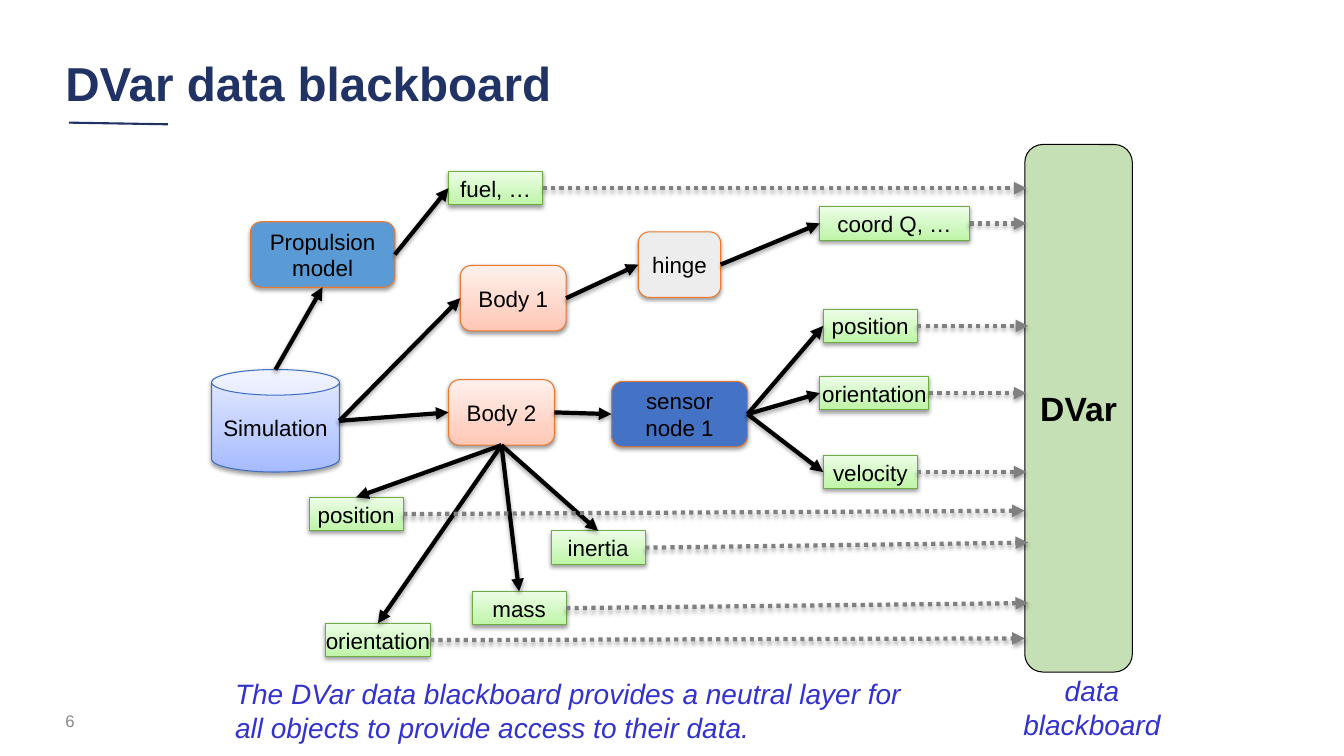
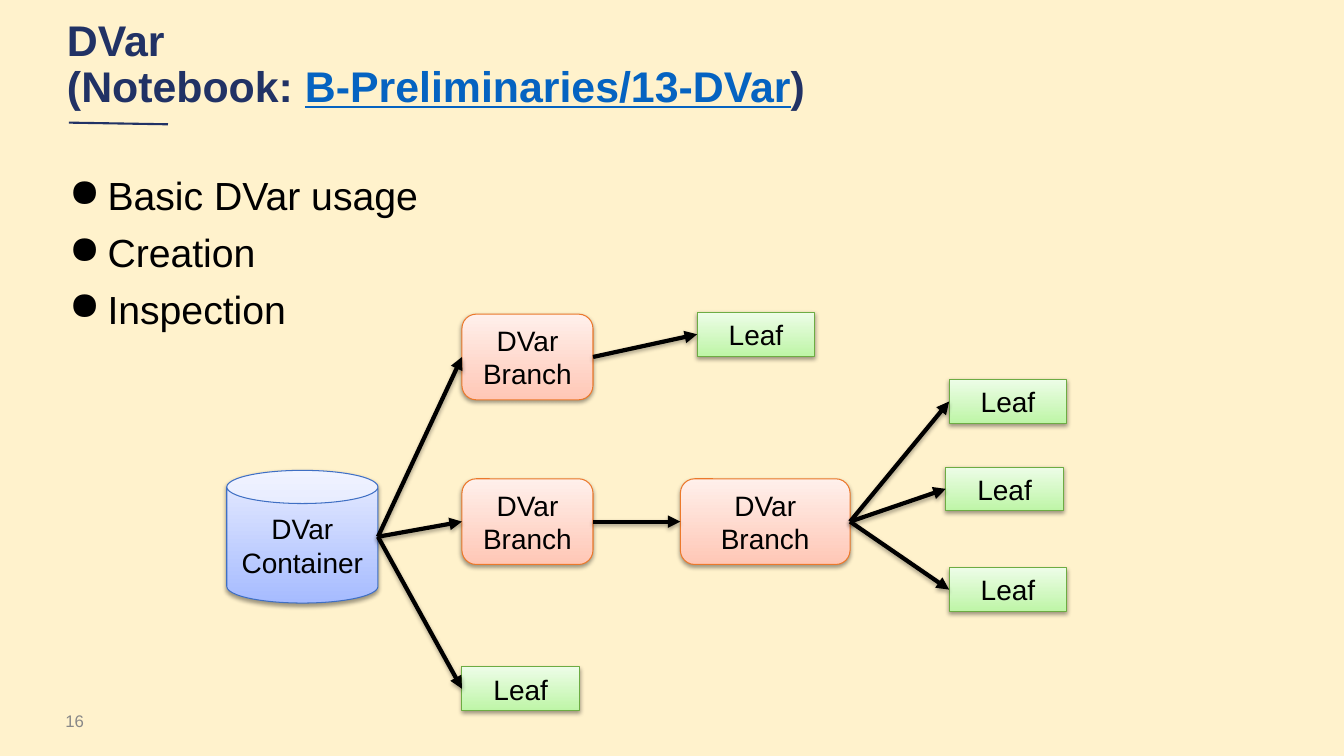
"""Build two slides that show how DVar gathers simulation data."""
from lxml import etree
from pptx import Presentation
from pptx.dml.color import RGBColor
from pptx.enum.dml import MSO_LINE
from pptx.enum.shapes import MSO_CONNECTOR, MSO_SHAPE
from pptx.enum.text import MSO_ANCHOR, PP_ALIGN
from pptx.oxml.ns import qn
from pptx.util import Inches, Pt

STRAIGHT = MSO_CONNECTOR.STRAIGHT
DOTTED = MSO_LINE.ROUND_DOT
CAN, RECTANGLE, ROUNDED = MSO_SHAPE.CAN, MSO_SHAPE.RECTANGLE, MSO_SHAPE.ROUNDED_RECTANGLE
TOP, MIDDLE = MSO_ANCHOR.TOP, MSO_ANCHOR.MIDDLE
LEFT_ALIGN, CENTER = PP_ALIGN.LEFT, PP_ALIGN.CENTER

WHITE = RGBColor(0xFF, 0xFF, 0xFF)
BLACK = RGBColor(0, 0, 0)
CREAM = RGBColor(0xFF, 0xF2, 0xCC)
NAVY = RGBColor(0x21, 0x32, 0x65)
NUMBER_GRAY = RGBColor(0x88, 0x88, 0x88)
FLOW_GRAY = RGBColor(0x80, 0x80, 0x80)
LINK_BLUE = RGBColor(0x05, 0x63, 0xC1)
CAPTION_BLUE = RGBColor(0x33, 0x33, 0xCC)
ORANGE = RGBColor(0xEC, 0x79, 0x2B)
PEACH, PALE_PEACH = RGBColor(0xFF, 0xC7, 0xB6), RGBColor(0xFF, 0xF0, 0xEB)
BLUE, PERIWINKLE, PALE_BLUE = RGBColor(0x3F, 0x6F, 0xC3), RGBColor(0xA6, 0xBB, 0xFF), RGBColor(0xE7, 0xEC, 0xFF)
GREEN, LIME, PALE_LIME = RGBColor(0x6D, 0xAC, 0x43), RGBColor(0xBE, 0xF5, 0xA7), RGBColor(0xED, 0xFD, 0xE7)
SENSOR_BLUE = RGBColor(0x44, 0x72, 0xC4)
MODEL_BLUE = RGBColor(0x5B, 0x9B, 0xD5)
HINGE_GRAY = RGBColor(0xED, 0xED, 0xED)
BOARD_GREEN = RGBColor(0xC5, 0xE0, 0xB4)

STORE = {"outline": CAN, "fills": (PERIWINKLE, PALE_BLUE), "edge": BLUE}
BRANCH = {"outline": ROUNDED, "fills": (PEACH, PALE_PEACH), "edge": ORANGE}
LEAF = {"outline": RECTANGLE, "fills": (LIME, PALE_LIME), "edge": GREEN, "wrap": False}
SENSOR = {**BRANCH, "fills": (SENSOR_BLUE,)}
MODEL = {**BRANCH, "fills": (MODEL_BLUE,)}
HINGE = {**BRANCH, "fills": (HINGE_GRAY,)}
BOARD = {"outline": ROUNDED, "fills": (BOARD_GREEN,), "edge": BLACK, "wrap": False, "shaded": False}

TOP_SIDE, LEFT_SIDE, BOTTOM_SIDE, RIGHT_SIDE = range(4)
SIDE_SHARES = {TOP_SIDE: (0.5, 0), LEFT_SIDE: (0, 0.5), BOTTOM_SIDE: (0.5, 1), RIGHT_SIDE: (1, 0.5)}
COLUMNS, ROWS = 80, 45


def write(frame, spans, size=16, color=BLACK, bold=False, italic=False, align=LEFT_ALIGN,
          line_spacing=None, space_before=0, bullet=None):
    """Add one paragraph; spans is a string or a list of (text, color, underline)."""
    paragraph = frame.paragraphs[0]
    if paragraph.runs:
        paragraph = frame.add_paragraph()
        paragraph.space_before = Pt(space_before)
    paragraph.alignment = align
    if line_spacing:
        paragraph.line_spacing = line_spacing
    if bullet:
        properties = paragraph._p.get_or_add_pPr()
        properties.set("marL", str(Inches(0.5)))
        properties.set("indent", str(Inches(-0.38)))
        etree.SubElement(properties, qn("a:buChar"), char=bullet)
    for text, span_color, underline in [(spans, color, False)] if isinstance(spans, str) else spans:
        for index, line in enumerate(text.split("\n")):
            if index:
                paragraph.add_line_break()
            span = paragraph.add_run()
            span.text = line
            span.font.name, span.font.size = "Arial", Pt(size)
            span.font.bold, span.font.italic, span.font.underline = bold, italic, underline
            span.font.color.rgb = span_color


def cast_shadow(properties, distance, opacity):
    """Append a soft downward shadow to shape properties."""
    effects = etree.SubElement(properties, qn("a:effectLst"))
    shadow = etree.SubElement(effects, qn("a:outerShdw"), blurRad="40000", dist=str(distance),
                              dir="5400000", rotWithShape="0")
    tint = etree.SubElement(shadow, qn("a:srgbClr"), val=str(BLACK))
    etree.SubElement(tint, qn("a:alpha"), val=str(opacity * 1000))


class Sketch:
    """Hold the deck, its grid and the slide being drawn."""

    def __init__(self):
        """Open an empty widescreen deck."""
        self.deck = Presentation()
        self.deck.slide_width, self.deck.slide_height = Inches(13.333), Inches(7.5)
        self.slide = None

    def place(self, column, row):
        """Turn a grid column and row into lengths."""
        return int(self.deck.slide_width * column / COLUMNS), int(self.deck.slide_height * row / ROWS)

    def start(self, title, number, background, **title_format):
        """Begin a slide with its title, rule and number."""
        self.slide = self.deck.slides.add_slide(self.deck.slide_layouts[6])
        self.slide.background.fill.solid()
        self.slide.background.fill.fore_color.rgb = background
        self.line(self.place(4.1, 7.3), self.place(10, 7.4), NAVY, 1.5)
        row, size = title_format["row"], title_format["size"]
        self.text(title, title_format["column"], row, 66.7, 4.6, anchor=MIDDLE,
                  size=size, color=NAVY, bold=True, line_spacing=0.9)
        self.text(number, 3.3, 41.7, 18, 2.4, anchor=MIDDLE, size=12, color=NUMBER_GRAY)

    def frame(self, column, row, width, height, anchor=TOP):
        """Add a wrapping text box and return its frame."""
        box = self.slide.shapes.add_textbox(*self.place(column, row), *self.place(width, height))
        box.text_frame.word_wrap = True
        box.text_frame.vertical_anchor = anchor
        return box.text_frame

    def text(self, spans, column, row, width, height, anchor=TOP, **text_format):
        """Add a text box with one paragraph."""
        write(self.frame(column, row, width, height, anchor), spans, **text_format)

    def bullets(self, items, column, row, width, height):
        """Add a bulleted list."""
        frame = self.frame(column, row, width, height)
        frame.margin_left = frame.margin_right = 0
        for item in items:
            write(frame, item, size=28, space_before=7, bullet="●")

    def node(self, kind, text, column, row, width, height, **text_format):
        """Add a labelled shape of one kind."""
        shape = self.slide.shapes.add_shape(kind["outline"], *self.place(column, row),
                                            *self.place(width, height))
        fills = kind["fills"]
        if len(fills) == 2:
            shape.fill.gradient()
            shape.fill.gradient_angle = 90
            for stop, color in zip(shape.fill.gradient_stops, fills):
                stop.color.rgb = color
        else:
            shape.fill.solid()
            shape.fill.fore_color.rgb = fills[0]
        shape.line.color.rgb, shape.line.width = kind["edge"], Pt(0.75)
        if kind.get("shaded", True):
            cast_shadow(shape._element.spPr, 20000, 38)
        else:
            shape.shadow.inherit = False
        shape.text_frame.word_wrap = kind.get("wrap", True)
        shape.text_frame.vertical_anchor = MIDDLE
        write(shape.text_frame, text, align=CENTER, **text_format)
        return shape

    def line(self, begin, end, color, width, dash=None, arrow=False):
        """Draw a straight line, with a shaded arrow on request."""
        connector = self.slide.shapes.add_connector(STRAIGHT, *begin, *end)
        connector.line.color.rgb, connector.line.width = color, Pt(width)
        properties = connector._element.spPr
        if dash:
            connector.line.dash_style = dash
        if arrow:
            etree.SubElement(properties.find(qn("a:ln")), qn("a:tailEnd"), type="triangle")
            cast_shadow(properties, 23000, 35)
        else:
            etree.SubElement(properties, qn("a:effectLst"))
        return connector

    def side_point(self, shape, side):
        """Find the middle of one side of a shape."""
        across, down = SIDE_SHARES[side]
        return int(shape.left + shape.width * across), int(shape.top + shape.height * down)

    def arrow(self, source, target, leave=RIGHT_SIDE, enter=LEFT_SIDE):
        """Join two nodes with an arrow."""
        connector = self.line(self.side_point(source, leave), self.side_point(target, enter),
                              BLACK, 3, arrow=True)
        if source.auto_shape_type != CAN:
            connector.begin_connect(source, leave)
        connector.end_connect(target, enter)

    def flow(self, source, column, row):
        """Send a dotted arrow from a node to a grid point."""
        connector = self.line(self.side_point(source, RIGHT_SIDE), self.place(column, row),
                              FLOW_GRAY, 3, DOTTED, arrow=True)
        connector.begin_connect(source, RIGHT_SIDE)


def draw_blackboard(sketch):
    """Draw the objects that publish data to the blackboard."""
    sketch.start("DVar data blackboard", "6", WHITE, column=3.3, row=2.8, size=34)

    def leaf(text, column, row, width=5.6):
        return sketch.node(LEAF, text, column, row, width, 2)

    def block(kind, text, column, row, width=6.3):
        return sketch.node(kind, text, column, row, width, 3.9)

    simulation = sketch.node(STORE, "Simulation", 12.6, 22, 7.6, 6.1)
    propulsion = block(MODEL, "Propulsion model", 14.9, 13.2, 8.6)
    first_body = block(BRANCH, "Body 1", 27.4, 15.8)
    second_body = block(BRANCH, "Body 2", 26.7, 22.6)
    hinge = block(HINGE, "hinge", 38, 13.8, 4.9)
    sensor = block(SENSOR, "sensor node 1", 36.4, 22.7, 8.1)
    fuel = leaf("fuel, …", 26.7, 10.2)
    coordinate = leaf("coord Q, …", 48.8, 12.3, 8.9)
    sensor_leaves = [leaf("position", 49, 18.4), leaf("orientation", 48.8, 22.4, 6.5),
                     leaf("velocity", 49, 27.1)]
    body_leaves = [leaf("position", 18.4, 29.6), leaf("orientation", 19.4, 37.1, 6.2),
                   leaf("mass", 28.1, 35.2), leaf("inertia", 32.8, 31.6)]
    sketch.node(BOARD, "DVar", 61, 8.6, 6.4, 31.4, size=24, bold=True)

    sketch.arrow(simulation, propulsion, TOP_SIDE, BOTTOM_SIDE)
    for source, target in [(simulation, first_body), (simulation, second_body), (propulsion, fuel),
                           (first_body, hinge), (hinge, coordinate), (second_body, sensor)]:
        sketch.arrow(source, target)
    for target in sensor_leaves:
        sketch.arrow(sensor, target)
    for target in body_leaves:
        sketch.arrow(second_body, target, BOTTOM_SIDE, TOP_SIDE)

    leaves = [fuel, coordinate, *sensor_leaves, *body_leaves]
    ends = [(61.1, 11.2), (61.1, 13.3), (61.2, 19.4), (61.1, 23.4), (61.1, 28.1),
            (61, 30.4), (61, 38), (61.2, 35.9), (61.2, 32.3)]
    for source, end in zip(leaves, ends):
        sketch.flow(source, *end)

    caption = {"size": 20, "color": CAPTION_BLUE, "italic": True}
    sketch.text("data blackboard", 59, 39.8, 12, 4.6, align=CENTER, **caption)
    sketch.text("The DVar data blackboard provides a neutral layer for all objects "
                "to provide access to their data.", 13.4, 40, 42.7, 4.6, **caption)


def draw_tree(sketch):
    """Draw the tree of container, branches and leaves."""
    title = [("DVar\n(Notebook: ", NAVY, False), ("B-Preliminaries/13-DVar", LINK_BLUE, True),
             (")", NAVY, False)]
    sketch.start(title, "16", CREAM, column=3.4, row=1.6, size=30.6)
    sketch.bullets(["Basic DVar usage", "Creation", "Inspection"], 3.4, 9.9, 73.2, 10)

    def branch(column, row, width=7.8):
        return sketch.node(BRANCH, "DVar Branch", column, row, width, 5.1, size=20)

    def leaf(column, row):
        return sketch.node(LEAF, "Leaf", column, row, 7, 2.6, size=20)

    container = sketch.node(STORE, "DVar Container", 13.5, 28, 9, 7.9, size=20)
    upper, lower, nested = branch(27.5, 18.7), branch(27.5, 28.5), branch(40.5, 28.5, 10.1)
    children = [
        (container, [upper, lower, leaf(27.5, 39.7)]),
        (upper, [leaf(41.5, 18.6)]),
        (lower, [nested]),
        (nested, [leaf(56.5, 22.6), leaf(56.3, 27.8), leaf(56.5, 33.8)]),
    ]
    for parent, targets in children:
        for target in targets:
            sketch.arrow(parent, target)


def main():
    """Draw both slides and save the deck."""
    sketch = Sketch()
    draw_blackboard(sketch)
    draw_tree(sketch)
    sketch.deck.save("out.pptx")


if __name__ == "__main__":
    main()
